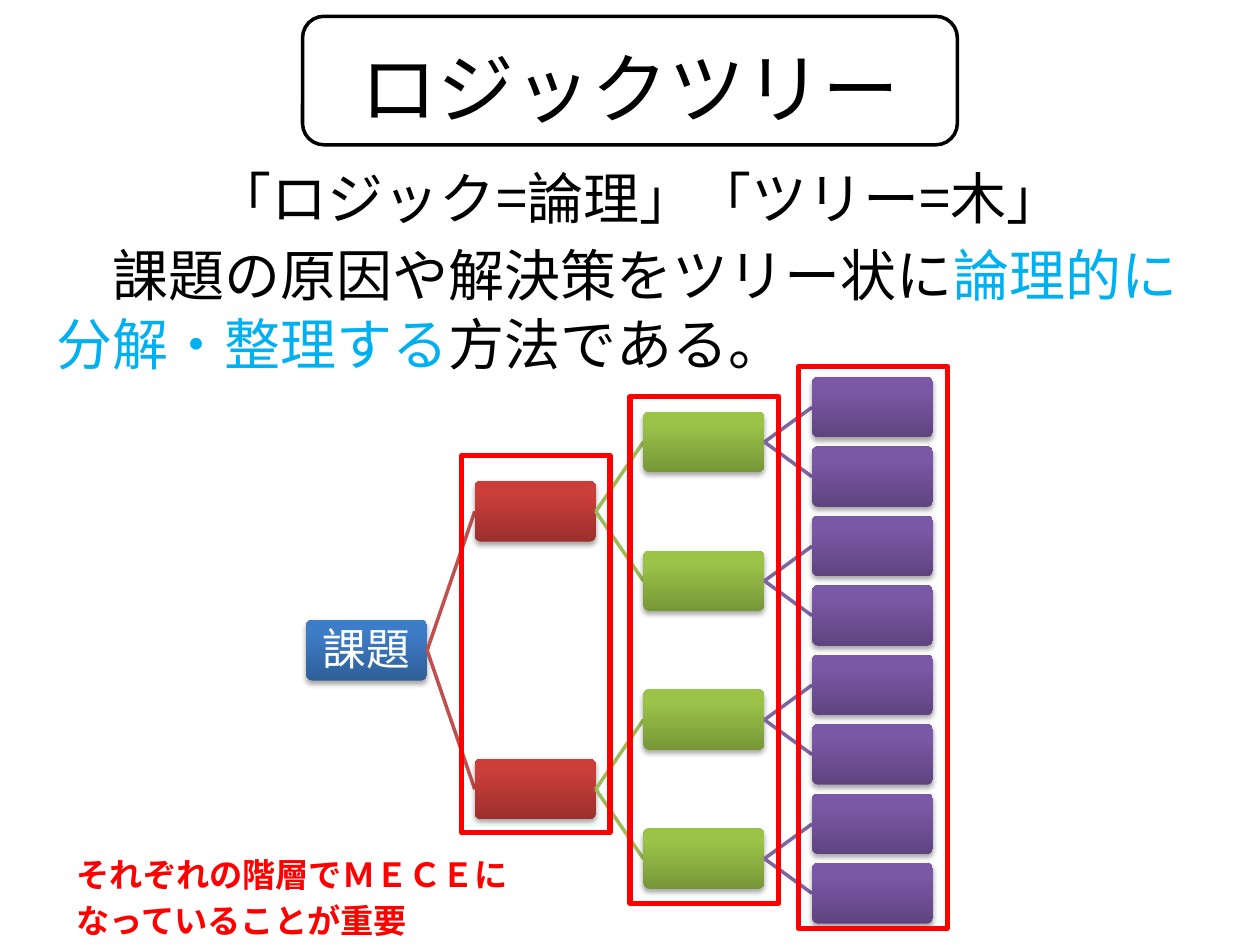
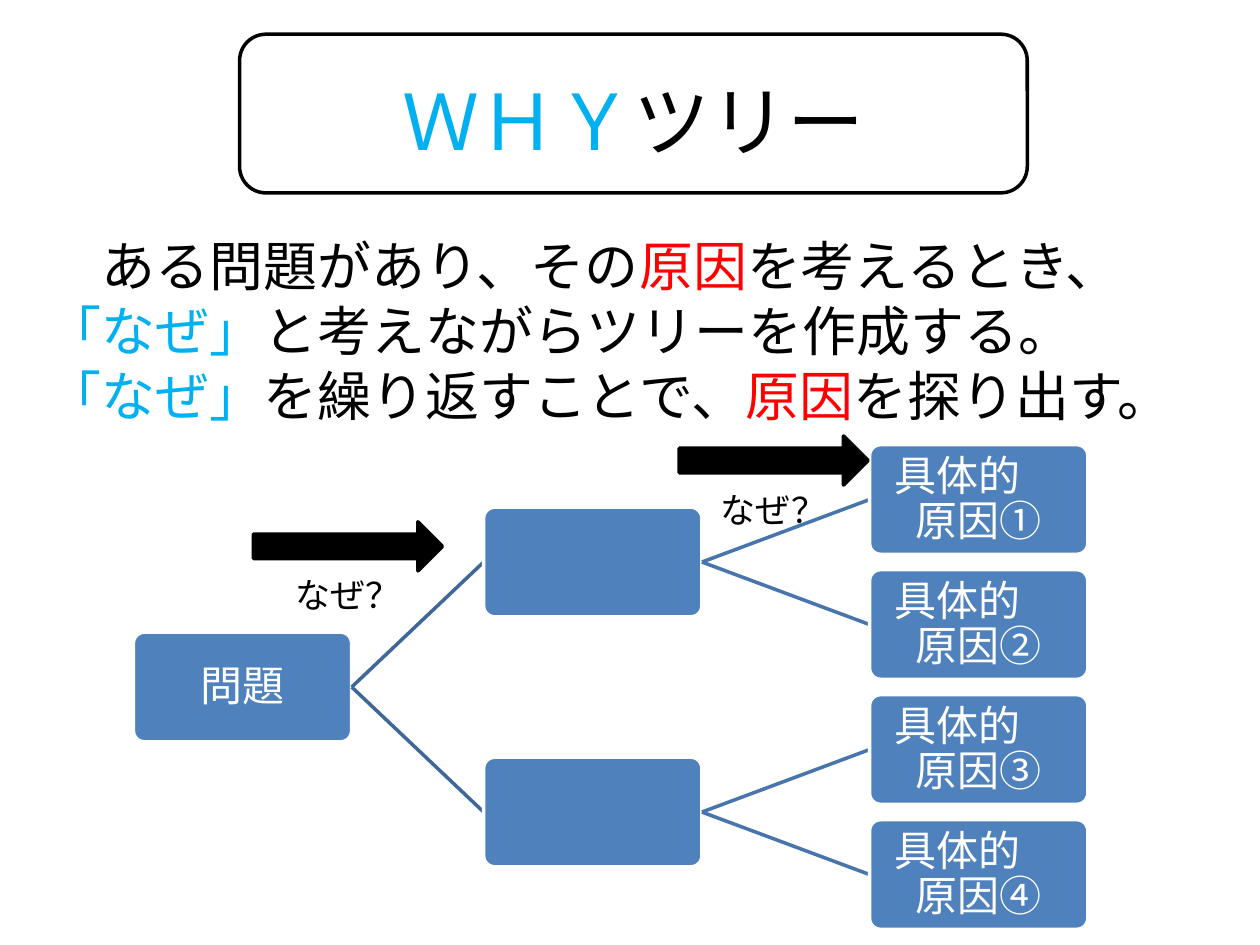
"""Build two slides that explain logic trees and WHY trees."""
from dataclasses import dataclass
from typing import NamedTuple, Optional

from lxml.etree import SubElement
from pptx import Presentation
from pptx.dml.color import RGBColor
from pptx.enum.shapes import MSO_CONNECTOR as ConnectorKind, MSO_SHAPE as Preset
from pptx.enum.text import MSO_ANCHOR as Anchor, PP_ALIGN as Align
from pptx.oxml.ns import qn
from pptx.shapes.autoshape import Shape
from pptx.slide import Slide
from pptx.util import Cm, Pt

FONT = "Noto Sans CJK JP"
COLORS = {
    "black": "000000", "white": "FFFFFF", "red": "FF0000", "sky": "00B0F0",
    "blue": "4F81BD", "branch_near": "3F6797", "branch_far": "4875AC",
    "blue_dark": "2F5F99", "blue_light": "3D7CC7",
    "red_dark": "9C2F2D", "red_light": "CB3E3A", "red_branch": "C0504D",
    "green_dark": "779737", "green_light": "9BC348", "green_branch": "9BBB59",
    "purple_dark": "5F4480", "purple_light": "7B58A6", "purple_branch": "8064A2",
}


class Box(NamedTuple):
    """Left, top, width and height in centimetres."""
    left: float
    top: float
    width: float
    height: float


class Level(NamedTuple):
    """Column of a tree: left edge, fill, branch colour and node texts."""
    left: float
    fill: tuple[str, ...]
    branch: str = ""
    labels: tuple[str, ...] = ()
    font: str = FONT


@dataclass(frozen=True)
class Tree:
    """Binary tree that grows to the right, with evenly spaced leaves."""
    levels: tuple[Level, ...]
    first_leaf: float
    pitch: float
    node_width: float
    node_height: float
    size: float
    outline: Optional[str] = None
    shadow: bool = False

    def center(self, depth: int, index: int) -> float:
        """Return the vertical centre of a node."""
        leaves = 2 ** (len(self.levels) - 1 - depth)
        return self.first_leaf + self.pitch * (leaves * index + (leaves - 1) / 2)


Run = tuple[str, str]

LOGIC_TREE = Tree(
    levels=(
        Level(6.17, ("blue_dark", "blue_light"), labels=("課題",)),
        Level(9.57, ("red_dark", "red_light"), "red_branch"),
        Level(12.97, ("green_dark", "green_light"), "green_branch"),
        Level(16.37, ("purple_dark", "purple_light"), "purple_branch"),
    ),
    first_leaf=8.21, pitch=1.4, node_width=2.44, node_height=1.22, size=25, shadow=True,
)
WHY_TREE = Tree(
    levels=(
        Level(2.69, ("blue",), labels=("問題",), font="Calibri"),
        Level(9.75, ("blue",), "branch_near"),
        Level(17.53, ("blue",), "branch_far", tuple(f"具体的　原因{mark}" for mark in "①②③④")),
    ),
    first_leaf=10.07, pitch=2.52, node_width=4.4, node_height=2.21, size=24, outline="white",
)
LEVEL_FRAMES = (Box(9.3, 9.19, 3, 7.59), Box(12.7, 8, 3, 10.21), Box(16.1, 7.39, 3, 11.33))
WHY_ARROWS = (Box(5.11, 10.52, 3.81, 0.99), Box(13.69, 8.79, 3.81, 0.99))


def rgb(name: str) -> RGBColor:
    """Look up a colour by name."""
    return RGBColor.from_string(COLORS[name])


def write(shape: Shape, paragraphs: list[list[Run]], *, size: float, font: str = FONT,
          bold: bool = False, aligns: tuple[Align, ...] = (Align.LEFT,),
          anchor: Anchor = Anchor.TOP, leading: float = 1.22, before: float = 0,
          inset: Optional[float] = None) -> None:
    """Fill a shape with paragraphs of coloured runs."""
    frame = shape.text_frame
    frame.word_wrap = True
    frame.vertical_anchor = anchor
    if inset is not None:
        frame.margin_left = frame.margin_right = Cm(inset)
        frame.margin_top = frame.margin_bottom = Cm(inset)
    for index, runs in enumerate(paragraphs):
        paragraph = frame.add_paragraph() if index else frame.paragraphs[0]
        paragraph.alignment = aligns[min(index, len(aligns) - 1)]
        paragraph.line_spacing = Pt(size * leading)
        paragraph.space_before = Pt(size * before)
        for text, color in runs:
            run = paragraph.add_run()
            run.text = text
            run.font.size = Pt(size)
            run.font.bold = bold
            run.font.color.rgb = rgb(color)
            run.font.name = font
            SubElement(run._r.get_or_add_rPr(), qn("a:ea"), typeface=font)


def add_text(slide: Slide, box: Box, paragraphs: list[list[Run]], **text_format) -> None:
    """Add a wrapping text box."""
    write(slide.shapes.add_textbox(*map(Cm, box)), paragraphs, **text_format)


def add_preset(slide: Slide, preset: Preset, box: Box, *, fill: tuple[str, ...] = (),
               line: Optional[str] = None, line_width: float = 2) -> Shape:
    """Add a preset shape with no, solid or two-colour upward gradient fill."""
    shape = slide.shapes.add_shape(preset, *map(Cm, box))
    shape.shadow.inherit = False
    if len(fill) == 2:
        shape.fill.gradient()
        shape.fill.gradient_angle = 90
        for stop, color, position in zip(shape.fill.gradient_stops, fill, (0, 0.8)):
            stop.color.rgb = rgb(color)
            stop.position = position
    elif fill:
        shape.fill.solid()
        shape.fill.fore_color.rgb = rgb(fill[0])
    else:
        shape.fill.background()
    if line:
        shape.line.color.rgb = rgb(line)
        shape.line.width = Pt(line_width)
    else:
        shape.line.fill.background()
    return shape


def add_soft_shadow(shape: Shape) -> None:
    """Give a shape a soft shadow below it."""
    effects = shape._element.spPr.find(qn("a:effectLst"))
    shadow = SubElement(effects, qn("a:outerShdw"), blurRad=str(Pt(3.1)),
                        dist=str(Pt(1.8)), dir="5400000", rotWithShape="0")
    color = SubElement(shadow, qn("a:srgbClr"), val=COLORS["black"])
    SubElement(color, qn("a:alpha"), val="35000")


def add_branch(slide: Slide, start: tuple[float, float], end: tuple[float, float],
               color: str) -> None:
    """Join two nodes with a straight line."""
    connector = slide.shapes.add_connector(ConnectorKind.STRAIGHT, *map(Cm, start + end))
    connector.line.color.rgb = rgb(color)
    connector.line.width = Pt(2)
    SubElement(connector._element.spPr, qn("a:effectLst"))


def add_node(slide: Slide, tree: Tree, depth: int = 0, index: int = 0) -> None:
    """Draw a node, then its branches and descendants."""
    level = tree.levels[depth]
    center = tree.center(depth, index)
    box = Box(level.left, center - tree.node_height / 2, tree.node_width, tree.node_height)
    node = add_preset(slide, Preset.ROUNDED_RECTANGLE, box, fill=level.fill, line=tree.outline)
    node.adjustments[0] = 0.1
    if tree.shadow:
        add_soft_shadow(node)
    if level.labels:
        write(node, [[(level.labels[index], "white")]], size=tree.size, font=level.font,
              aligns=(Align.CENTER,), anchor=Anchor.MIDDLE, leading=1.08, inset=0.05)
    if depth + 1 < len(tree.levels):
        child_level = tree.levels[depth + 1]
        for child in (2 * index, 2 * index + 1):
            add_branch(slide, (level.left + tree.node_width, center),
                       (child_level.left, tree.center(depth + 1, child)), child_level.branch)
            add_node(slide, tree, depth + 1, child)


def add_title(slide: Slide, box: Box, runs: list[Run]) -> None:
    """Add a slide title in a rounded outline."""
    outline = add_preset(slide, Preset.ROUNDED_RECTANGLE, box, line="black")
    write(outline, [runs], size=44, aligns=(Align.CENTER,), anchor=Anchor.MIDDLE, leading=1.35)


def build_logic_slide(slide: Slide) -> None:
    """Explain the logic tree and frame its levels."""
    add_title(slide, Box(6.1, 0.33, 13.2, 2.59), [("ロジックツリー", "black")])
    add_text(slide, Box(0.89, 3.15, 24, 4.19), [
        [("「ロジック=論理」「ツリー=木」", "black")],
        [("　課題の原因や解決策をツリー状に", "black"), ("論理的に分解・整理する", "sky"),
         ("方法である。", "black")],
    ], size=32, aligns=(Align.CENTER, Align.LEFT), before=0.16)
    add_node(slide, LOGIC_TREE)
    for frame in LEVEL_FRAMES:
        add_preset(slide, Preset.RECTANGLE, frame, line="red", line_width=3)
    add_text(slide, Box(1.3, 17.09, 9.3, 1.88), [
        [("それぞれの階層でＭＥＣＥに", "red")], [("なっていることが重要", "red")],
    ], size=19, bold=True, before=0.16)


def build_why_slide(slide: Slide) -> None:
    """Explain the WHY tree and mark each question."""
    add_title(slide, Box(4.83, 0.69, 15.88, 3.2), [("ＷＨＹ", "sky"), ("ツリー", "black")])
    add_text(slide, Box(0.71, 4.37, 24, 4.57), [
        [("　ある問題があり、その", "black"), ("原因", "red"), ("を考えるとき、", "black"),
         ("「なぜ」", "sky"), ("と考えながらツリーを作成する。", "black")],
        [("「なぜ」", "sky"), ("を繰り返すことで、", "black"), ("原因", "red"),
         ("を探り出す。", "black")],
    ], size=30.8, anchor=Anchor.MIDDLE, leading=1.2)
    add_node(slide, WHY_TREE)
    for arrow in WHY_ARROWS:
        add_text(slide, arrow._replace(top=arrow.top + 0.91, height=1.12),
                 [[("なぜ？", "black")]], size=20, aligns=(Align.CENTER,))
        add_preset(slide, Preset.RIGHT_ARROW, arrow, fill=("black",), line="black")


def main() -> None:
    """Build and save the presentation."""
    presentation = Presentation()
    presentation.slide_width, presentation.slide_height = Cm(25.4), Cm(19.05)
    for build in (build_logic_slide, build_why_slide):
        build(presentation.slides.add_slide(presentation.slide_layouts[6]))
    presentation.save("out.pptx")


if __name__ == "__main__":
    main()
